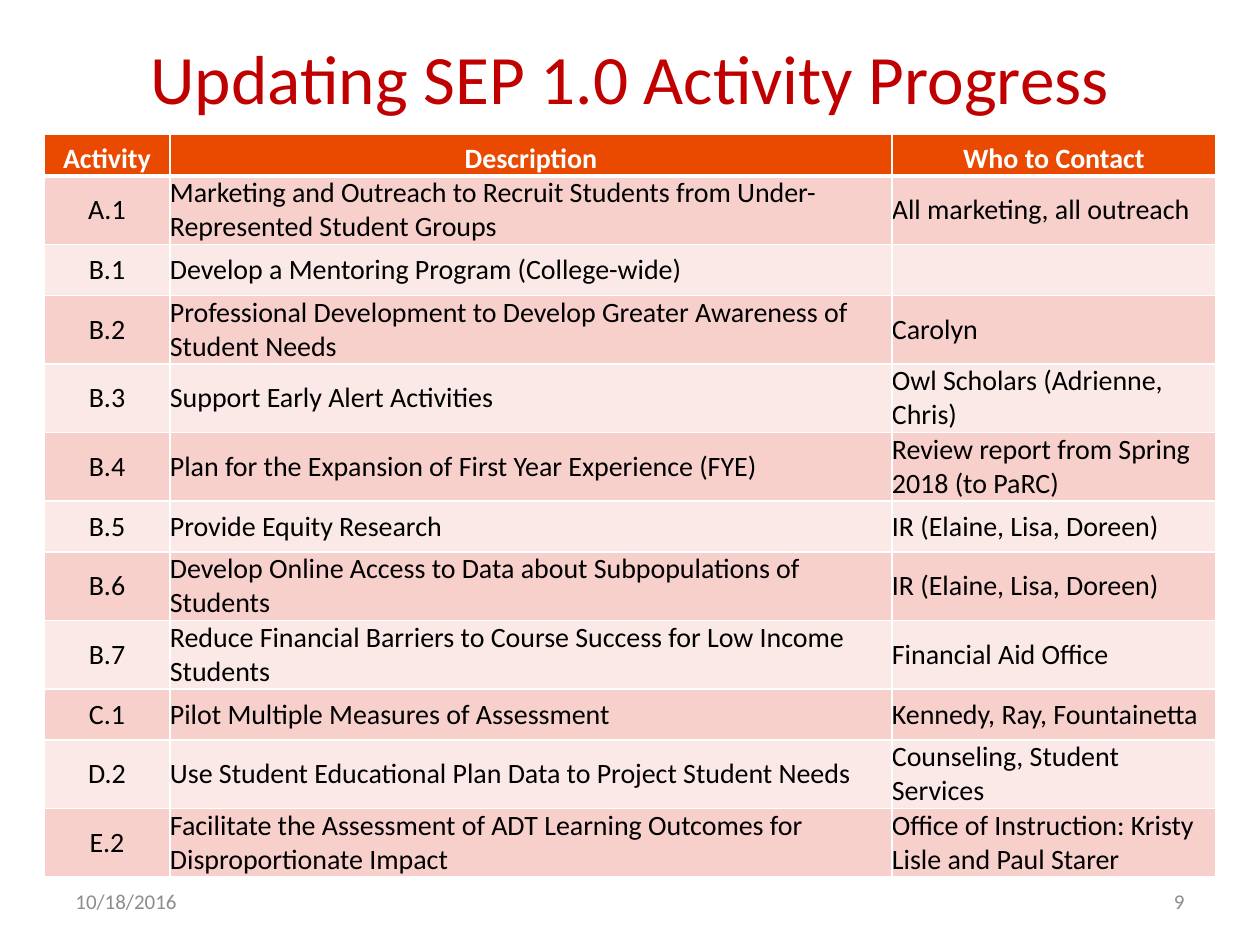
from lxml import etree
from pptx import Presentation
from pptx import util as u
from pptx.dml.color import RGBColor
from pptx.enum import text
from pptx.oxml.ns import qn

# Content
TITLE = "Updating SEP 1.0 Activity Progress"
HEADER = ("Activity", "Description", "Who to Contact")
ACTIVITIES = [
    ("A.1", "Marketing and Outreach to Recruit Students from Under-Represented Student Groups",
     "All marketing, all outreach"),
    ("B.1", "Develop a Mentoring Program (College-wide)", ""),
    ("B.2", "Professional Development to Develop Greater Awareness of Student Needs", "Carolyn"),
    ("B.3", "Support Early Alert Activities", "Owl Scholars (Adrienne, Chris)"),
    ("B.4", "Plan for the Expansion of First Year Experience (FYE)",
     "Review report from Spring 2018 (to PaRC)"),
    ("B.5", "Provide Equity Research", "IR (Elaine, Lisa, Doreen)"),
    ("B.6", "Develop Online Access to Data about Subpopulations of Students",
     "IR (Elaine, Lisa, Doreen)"),
    ("B.7", "Reduce Financial Barriers to Course Success for Low Income Students",
     "Financial Aid Office"),
    ("C.1", "Pilot Multiple Measures of Assessment", "Kennedy, Ray, Fountainetta"),
    ("D.2", "Use Student Educational Plan Data to Project Student Needs",
     "Counseling, Student Services"),
    ("E.2", "Facilitate the Assessment of ADT Learning Outcomes for Disproportionate Impact",
     "Office of Instruction: Kristy Lisle and Paul Starer"),
]
COLORS = {"title": "C00000", "header": "E94A00", "odd": "F7D0CC", "even": "FBE9E7",
          "white": "FFFFFF", "black": "000000", "footer": "8C8C8C"}

# Layout in px
PX = 914400 // 126
COL_WIDTHS = (126, 722, 324)
HEADER_H, ROW_H, TABLE_H = 42, 51, 732
LEFT, CENTER, RIGHT = text.PP_ALIGN.LEFT, text.PP_ALIGN.CENTER, text.PP_ALIGN.RIGHT
MIDDLE, BOTTOM = text.MSO_ANCHOR.MIDDLE, text.MSO_ANCHOR.BOTTOM


def px(*lengths):
    return [u.Emu(n * PX) for n in lengths]


def write(tf, words, size, color, align, bold=False):
    p = tf.paragraphs[0]
    p.text, p.alignment = words, align
    p.font.name, p.font.size, p.font.bold = "Calibri", u.Pt(size), bold
    p.font.color.rgb = RGBColor.from_string(COLORS[color])


def add_borders(cell, top, bottom):
    tcPr = cell._tc.get_or_add_tcPr()
    for side, width in (("L", 1), ("R", 1), ("T", top), ("B", bottom)):
        ln = etree.SubElement(tcPr, qn(f"a:ln{side}"), w=str(u.Pt(width)))
        fill = etree.SubElement(ln, qn("a:solidFill"))
        etree.SubElement(fill, qn("a:srgbClr"), val=COLORS["white"])


def add_activity_table(s):
    rows = [HEADER, *ACTIVITIES]
    frame = s.shapes.add_table(len(rows), len(HEADER), *px(44, 134, sum(COL_WIDTHS), TABLE_H))
    table = frame.table
    for col, width in zip(table.columns, px(*COL_WIDTHS)):
        col.width = width
    for i, row in enumerate(rows):
        head = i == 0
        table.rows[i].height = px(HEADER_H if head else ROW_H)[0]
        fill = "header" if head else "odd" if i % 2 else "even"
        for j, words in enumerate(row):
            cell = table.cell(i, j)
            cell.margin_left = cell.margin_right = cell.margin_top = cell.margin_bottom = 0
            cell.vertical_anchor = BOTTOM if head else MIDDLE
            # The thick rule lies between the header and the first activity
            add_borders(cell, top=3 if i == 1 else 1, bottom=3 if head else 1)
            cell.fill.solid()
            cell.fill.fore_color.rgb = RGBColor.from_string(COLORS[fill])
            write(cell.text_frame, words, 16, "white" if head else "black",
                  CENTER if head or j == 0 else LEFT, bold=head)
    frame.height = px(TABLE_H)[0]


def main():
    prs = Presentation()
    prs.slide_width, prs.slide_height = px(1260, 945)
    s = prs.slides.add_slide(prs.slide_layouts[5])

    # Title
    title = s.shapes.title
    title.left, title.top, title.width, title.height = px(63, 38, 1134, 78)
    tf = title.text_frame
    tf.auto_size, tf.vertical_anchor = text.MSO_AUTO_SIZE.NONE, MIDDLE
    write(tf, TITLE, 39.6, "title", CENTER)

    add_activity_table(s)

    # Date and page number
    for left, words, align in ((63, "10/18/2016", LEFT), (903, "9", RIGHT)):
        tf = s.shapes.add_textbox(*px(left, 876, 294, 50)).text_frame
        tf.word_wrap, tf.vertical_anchor = True, MIDDLE
        write(tf, words, 12, "footer", align)

    prs.save("out.pptx")


if __name__ == "__main__":
    main()
